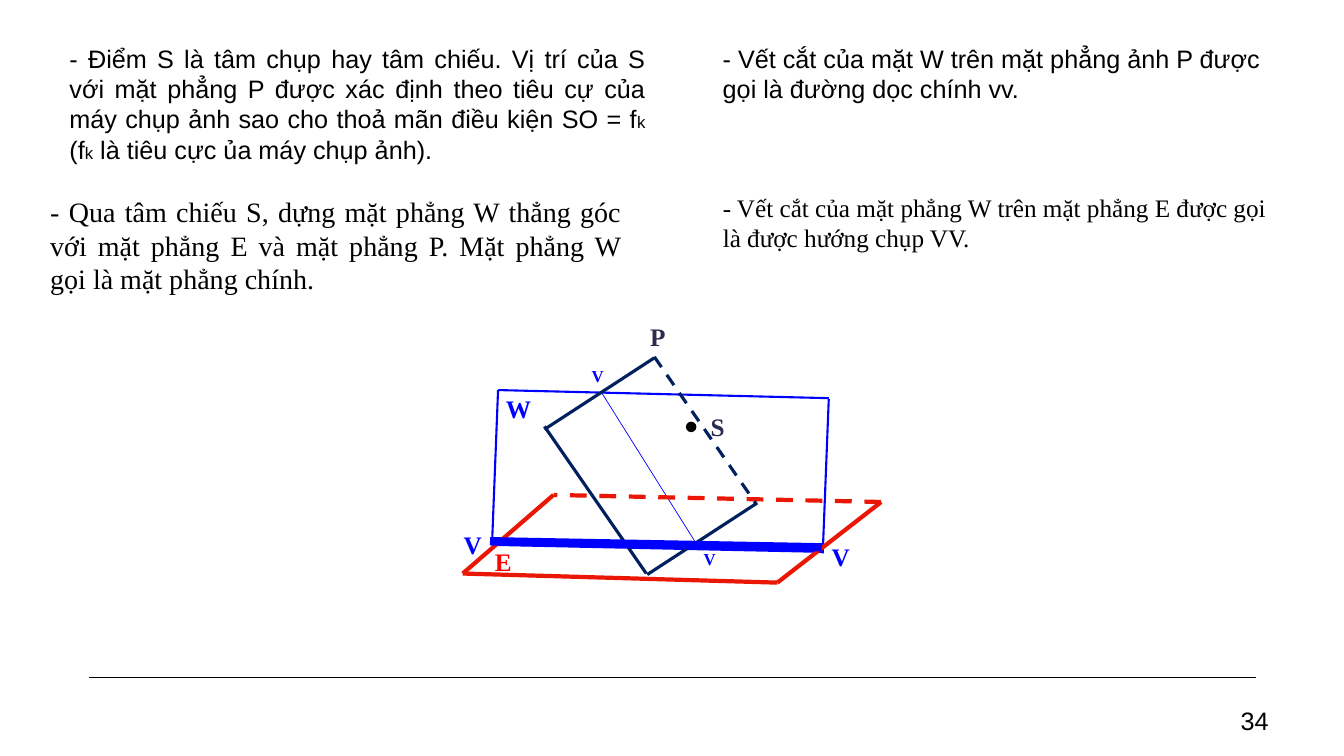
from dataclasses import dataclass

from lxml.etree import SubElement
from pptx import Presentation
from pptx.dml.color import RGBColor
from pptx.enum.dml import MSO_LINE
from pptx.enum.shapes import MSO_CONNECTOR as Connector, MSO_SHAPE as Preset
from pptx.enum.text import MSO_ANCHOR as Anchor, MSO_AUTO_SIZE as AutoSize, PP_ALIGN as Align
from pptx.oxml.ns import qn
from pptx.util import Emu, Pt

PX = 9144  # EMU per px, 100 px to the inch
SANS, SERIF = "Arial", "Times New Roman"
BLACK, BLUE, NAVY, RED = "000000", "0000FF", "002060", "EA1606"
LABEL_RED, LABEL_DARK = "FF0000", "2C2C4E"


@dataclass
class Edge:
    start: tuple[int, int]
    end: tuple[int, int]
    color: str
    weight: float
    dashed: bool = False


@dataclass
class Passage:
    box: tuple[int, int, int, int]
    spans: list[tuple[str, int]]
    font: str
    align: Align = Align.LEFT


@dataclass
class Label:
    box: tuple[int, int, int, int]
    text: str
    color: str
    size: int = 18


EDGES = [
    Edge((88, 672), (1246, 672), BLACK, 1),  # footer rule
    # Plane W
    Edge((494, 387), (488, 540), BLUE, 1.5),
    Edge((822, 396), (816, 549), BLUE, 1.5),
    Edge((494, 387), (822, 395), BLUE, 1.5),
    Edge((488, 540), (816, 547), BLUE, 2.25),
    Edge((597, 390), (691, 540), BLUE, 0.5),  # main vertical vv
    # Plane E
    Edge((549, 491), (459, 569), RED, 3),
    Edge((771, 578), (459, 569), RED, 3),
    Edge((771, 578), (874, 498), RED, 3),
    Edge((874, 498), (549, 491), RED, 3, dashed=True),
    # Plane P
    Edge((540, 423), (641, 569), NAVY, 2.25),
    Edge((540, 426), (649, 355), NAVY, 2.25),
    Edge((642, 570), (751, 499), NAVY, 2.25),
    Edge((649, 354), (750, 500), NAVY, 2.25, dashed=True),
    Edge((486, 537), (815, 543), BLUE, 6),  # shooting direction VV
]

PASSAGES = [
    Passage((59, 38, 591, 131), [
        ("- Điểm S là tâm chụp hay tâm chiếu. Vị trí của S với mặt phẳng P được xác định "
         "theo tiêu cự của máy chụp ảnh sao cho thoả mãn điều kiện SO = f", 18),
        ("k", 12), (" (f", 18), ("k", 12), (" là tiêu cực ủa máy chụp ảnh).", 18),
    ], SANS, Align.JUSTIFY),
    Passage((707, 38, 560, 71), [
        ("- Vết cắt của mặt W trên mặt phẳng ảnh P được gọi là đường dọc chính vv.", 18),
    ], SANS),
    Passage((707, 186, 562, 71), [
        ("- Vết cắt của mặt phẳng W trên mặt phẳng E được gọi là được hướng chụp VV.", 18),
    ], SERIF),
    Passage((40, 188, 586, 111), [
        ("- Qua tâm chiếu S, dựng mặt phẳng W thẳng góc với mặt phẳng E và mặt phẳng P. "
         "Mặt phẳng W gọi là mặt phẳng chính.", 20),
    ], SERIF, Align.JUSTIFY),
]

LABELS = [
    Label((492, 385, 45, 40), "W", BLUE),
    Label((577, 358, 32, 30), "V", BLUE, 12),
    Label((688, 539, 32, 30), "V", BLUE, 12),
    Label((695, 403, 34, 40), "S", LABEL_DARK),
    Label((481, 537, 37, 40), "E", LABEL_RED),
    Label((635, 314, 37, 40), "P", LABEL_DARK),
    Label((815, 532, 43, 40), "V", BLUE),
    Label((450, 520, 43, 40), "V", BLUE),
]


def emu(*lengths: int) -> list[Emu]:
    return [Emu(length * PX) for length in lengths]


def rgb(color: str) -> RGBColor:
    return RGBColor.from_string(color)


def draw_edge(page, edge: Edge) -> None:
    line = page.shapes.add_connector(Connector.STRAIGHT, *emu(*edge.start, *edge.end))
    line.line.color.rgb = rgb(edge.color)
    line.line.width = Pt(edge.weight)
    if edge.dashed:
        line.line.dash_style = MSO_LINE.DASH
    SubElement(line._element.spPr, qn("a:effectLst"))


def add_text(page, box: tuple[int, int, int, int], spans: list[tuple[str, int]], *,
             font: str, color: str = BLACK, bold: bool = False, wrap: bool = True,
             align: Align = Align.LEFT, anchor: Anchor = Anchor.TOP) -> None:
    frame = page.shapes.add_textbox(*emu(*box)).text_frame
    frame.word_wrap = wrap
    frame.auto_size = AutoSize.NONE
    frame.vertical_anchor = anchor
    para = frame.paragraphs[0]
    para.alignment = align
    for text, size in spans:
        span = para.add_run()
        span.text = text
        span.font.name = font
        span.font.size = Pt(size)
        span.font.bold = bold
        span.font.color.rgb = rgb(color)


def draw_center(page) -> None:
    dot = page.shapes.add_shape(Preset.OVAL, *emu(681, 419, 9, 9))
    dot.shadow.inherit = False
    dot.fill.solid()
    dot.fill.fore_color.rgb = rgb(BLACK)
    dot.line.color.rgb = rgb(BLACK)
    dot.line.width = Pt(1)


def main() -> None:
    deck = Presentation()
    deck.slide_width, deck.slide_height = emu(1333, 750)
    page = deck.slides.add_slide(deck.slide_layouts[6])

    # Diagram of the three planes
    for edge in EDGES:
        draw_edge(page, edge)
    draw_center(page)
    for label in LABELS:
        add_text(page, label.box, [(label.text, label.size)], font=SERIF,
                 color=label.color, bold=True, wrap=False)

    # Explanations and page number
    for passage in PASSAGES:
        add_text(page, passage.box, passage.spans, font=passage.font, align=passage.align)
    add_text(page, (1194, 695, 74, 40), [("34", 18)], font=SANS,
             align=Align.RIGHT, anchor=Anchor.MIDDLE)

    deck.save("out.pptx")


if __name__ == "__main__":
    main()
